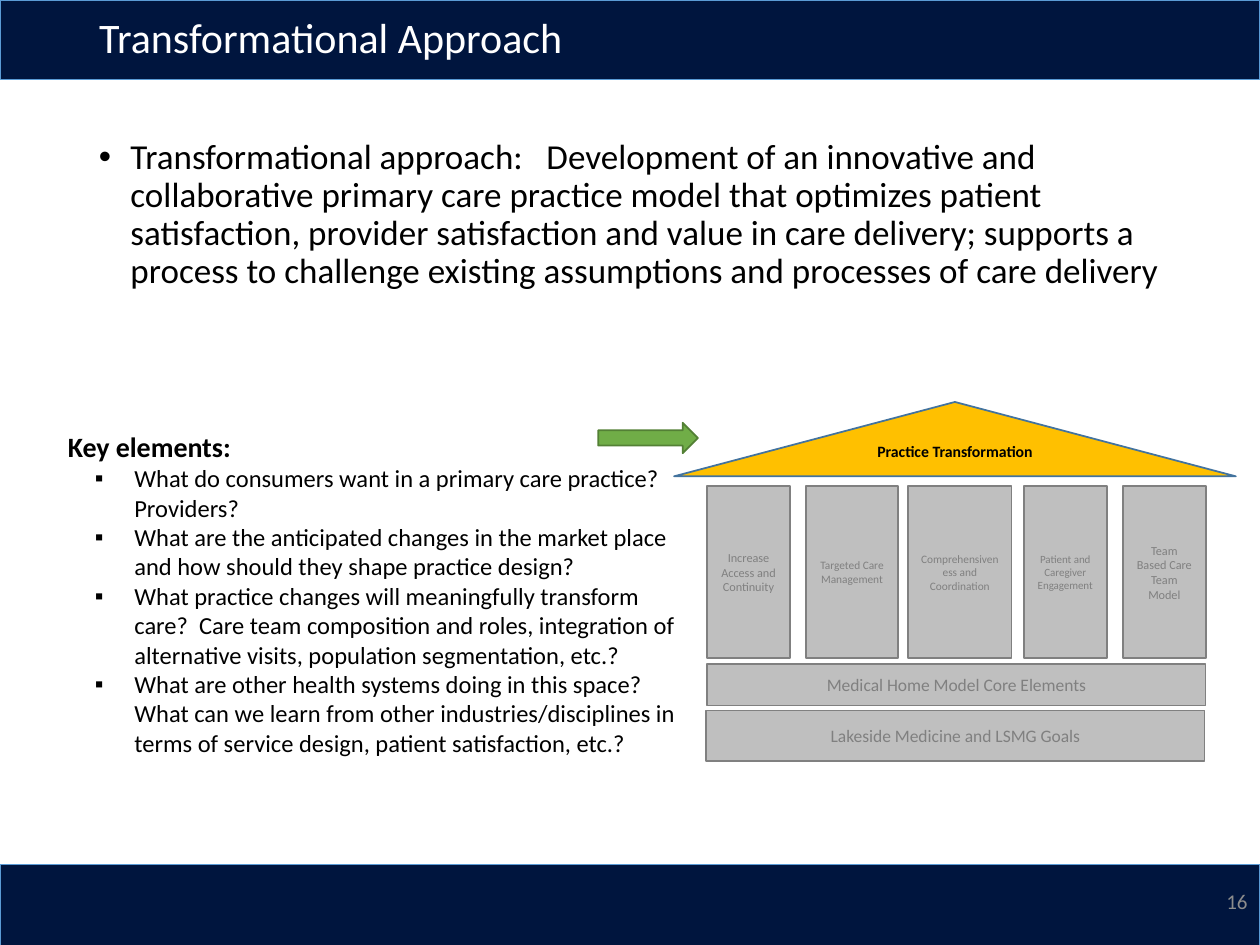
from dataclasses import dataclass

from lxml.etree import SubElement
from pptx import Presentation
from pptx.dml.color import RGBColor
from pptx.enum.shapes import MSO_SHAPE as Preset
from pptx.enum.text import MSO_ANCHOR as Anchor, PP_ALIGN as Align
from pptx.oxml.ns import qn
from pptx.util import Pt

COLORS = {
    "navy": "00153E", "navy_edge": "5B9BD5", "white": "FFFFFF", "black": "000000",
    "block": "BFBFBF", "block_ink": "808080", "roof": "FFC000", "roof_edge": "43739E",
    "arrow": "70AD47", "arrow_edge": "538035", "number": "8C8C8C",
}
BODY = (
    "Transformational approach:   Development of an innovative and collaborative primary "
    "care practice model that optimizes patient satisfaction, provider satisfaction and value "
    "in care delivery; supports a process to challenge existing assumptions and processes of "
    "care delivery"
)
QUESTIONS = [
    "What do consumers want in a primary care practice? Providers?",
    "What are the anticipated changes in the market place and how should they shape practice design?",
    "What practice changes will meaningfully transform care?  Care team composition and roles, "
    "integration of alternative visits, population segmentation, etc.?",
    "What are other health systems doing in this space? What can we learn from other "
    "industries/disciplines in terms of service design, patient satisfaction, etc.?",
]


@dataclass(frozen=True)
class Box:
    left: float
    top: float
    width: float
    height: float

    def points(self) -> tuple:
        return tuple(Pt(v) for v in (self.left, self.top, self.width, self.height))


@dataclass(frozen=True)
class Block:
    """One grey part of the house."""
    text: str
    box: Box
    size: float


PILLAR_TOP, PILLAR_HEIGHT = 277.9, 98.2
PILLARS = [
    Block(text, Box(left, PILLAR_TOP, width, PILLAR_HEIGHT), size)
    for text, left, width, size in [
        ("Increase Access and Continuity", 404, 47.5, 7),
        ("Targeted Care Management", 460.6, 52.6, 6.5),
        ("Comprehensiveness and Coordination", 519, 59, 6.5),
        ("Patient and Caregiver Engagement", 585, 47.5, 6.3),
        ("Team Based Care Team Model", 641.6, 47.5, 7),
    ]
]
BASES = [
    Block("Medical Home Model Core Elements", Box(404, 379.4, 285, 23.8), 10),
    Block("Lakeside Medicine and LSMG Goals", Box(403.4, 406, 285, 28.8), 10),
]


def write(paragraph, text: str, size: float, color: str, bold: bool = False, **layout) -> None:
    paragraph.text = text
    font = paragraph.font
    formats = {"name": "Calibri", "size": Pt(size), "bold": bold}
    for name, value in formats.items():
        setattr(font, name, value)
    font.color.rgb = RGBColor.from_string(COLORS[color])
    for name, value in layout.items():
        setattr(paragraph, name, value)


def add_bullet(paragraph, mark: str, margin: float, hang: float) -> None:
    properties = paragraph._p.get_or_add_pPr()
    properties.set("marL", str(Pt(margin)))
    properties.set("indent", str(-Pt(hang)))
    SubElement(properties, qn("a:buFont"), typeface="Arial")
    SubElement(properties, qn("a:buChar"), char=mark)


def add_filled(shapes, preset, box: Box, fill: str, edge: str, line_width: float = 1):
    shape = shapes.add_shape(preset, *box.points())
    shape.shadow.inherit = False
    shape.fill.solid()
    shape.fill.fore_color.rgb = RGBColor.from_string(COLORS[fill])
    shape.line.color.rgb = RGBColor.from_string(COLORS[edge])
    shape.line.width = Pt(line_width)
    return shape


def add_text_box(slide, box: Box, anchor=Anchor.TOP):
    frame = slide.shapes.add_textbox(*box.points()).text_frame
    frame.word_wrap = True
    frame.vertical_anchor = anchor
    return frame


def add_block(shapes, block: Block) -> None:
    shape = add_filled(shapes, Preset.RECTANGLE, block.box, "block", "block_ink")
    shape.text_frame.vertical_anchor = Anchor.MIDDLE
    write(shape.text_frame.paragraphs[0], block.text, block.size, "block_ink",
          alignment=Align.CENTER)


def add_house(slide) -> None:
    shapes = slide.shapes.add_group_shape().shapes
    roof = add_filled(shapes, Preset.ISOSCELES_TRIANGLE, Box(385.2, 229.7, 321, 42.5),
                      "roof", "roof_edge")
    frame = roof.text_frame
    formats = {"vertical_anchor": Anchor.MIDDLE, "margin_top": 0, "margin_bottom": Pt(7)}
    for name, value in formats.items():
        setattr(frame, name, value)
    write(frame.paragraphs[0], "Practice Transformation", 9, "black", bold=True,
          alignment=Align.CENTER)
    for block in PILLARS + BASES:
        add_block(shapes, block)


def add_title(slide) -> None:
    title = slide.shapes.title
    slide.shapes._spTree.append(title._element)  # in front of the top band
    title.left, title.top, title.width, title.height = Box(49.5, -16.6, 621, 78.5).points()
    title.text_frame.vertical_anchor = Anchor.MIDDLE
    write(title.text_frame.paragraphs[0], "Transformational Approach", 24, "white",
          alignment=Align.LEFT, line_spacing=0.9)


def add_key_elements(slide) -> None:
    frame = add_text_box(slide, Box(31.7, 241.9, 368, 218))
    write(frame.paragraphs[0], "Key elements:", 16, "black", bold=True)
    for question in QUESTIONS:
        paragraph = frame.add_paragraph()
        add_bullet(paragraph, "▪", 38, 22.5)
        write(paragraph, question, 14, "black", level=1)


def main() -> None:
    presentation = Presentation()
    presentation.slide_width, presentation.slide_height = Pt(720), Pt(540)
    slide = presentation.slides.add_slide(presentation.slide_layouts[5])

    for band in (Box(0, 0, 720, 45.3), Box(0, 494, 720, 46)):
        add_filled(slide.shapes, Preset.RECTANGLE, band, "navy", "navy_edge", 0.5)
    add_title(slide)

    body = add_text_box(slide, Box(49.5, 76.3, 621, 417.6)).paragraphs[0]
    add_bullet(body, "•", 18, 18)
    write(body, BODY, 20, "black", line_spacing=0.9)

    number = add_text_box(slide, Box(558, 500.4, 162, 28.8), Anchor.MIDDLE).paragraphs[0]
    write(number, "16", 12, "number", alignment=Align.RIGHT)

    add_house(slide)
    add_key_elements(slide)
    add_filled(slide.shapes, Preset.RIGHT_ARROW, Box(341.8, 241.6, 57, 17.4),
               "arrow", "arrow_edge")
    presentation.save("out.pptx")


if __name__ == "__main__":
    main()
